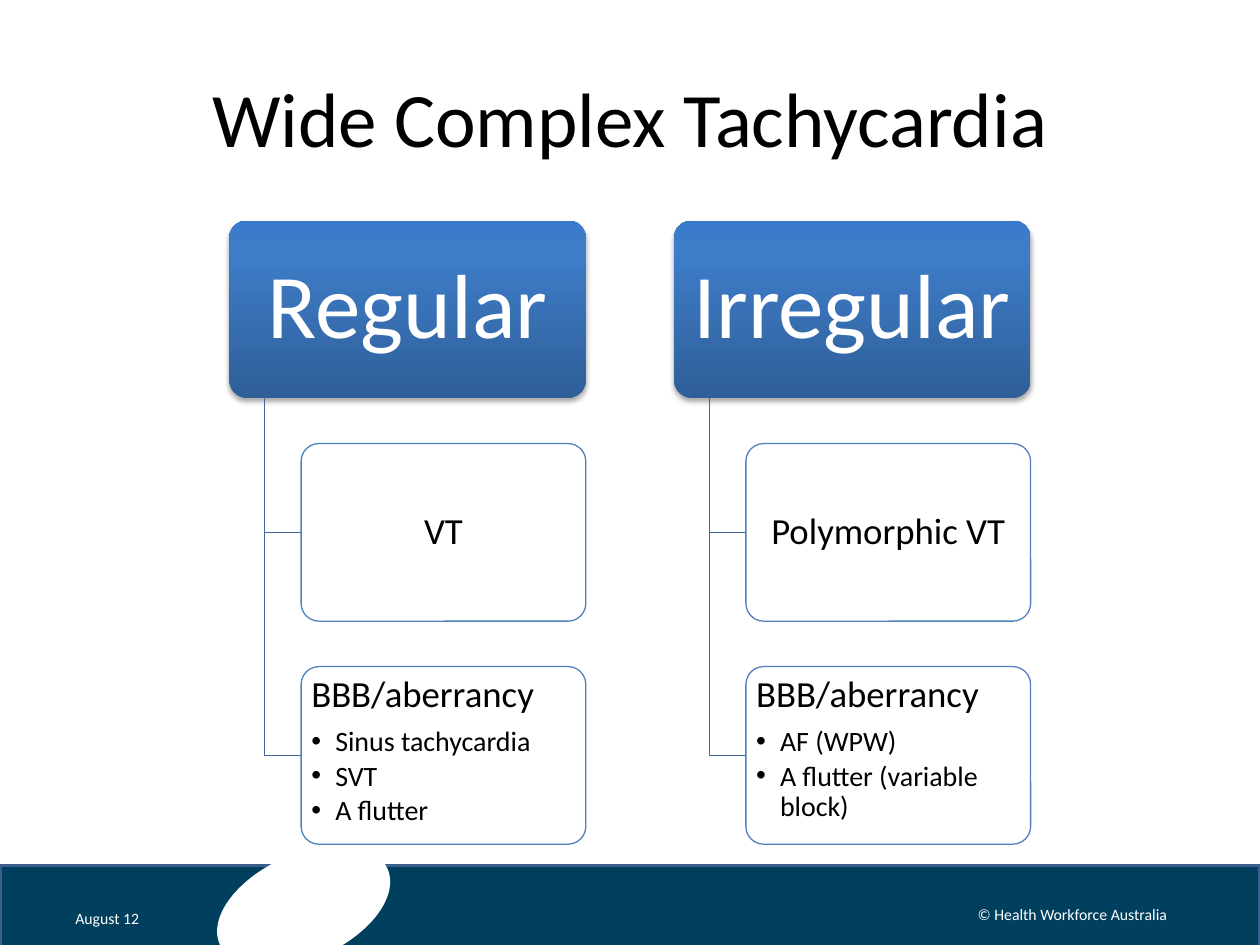
from copy import deepcopy

from lxml import etree
from pptx import Presentation
from pptx.dml.color import RGBColor
from pptx.enum.shapes import MSO_SHAPE
from pptx.enum.text import MSO_ANCHOR, PP_ALIGN
from pptx.oxml.ns import qn
from pptx.util import Inches, Pt

RECTANGLE, OVAL, ROUNDED = MSO_SHAPE.RECTANGLE, MSO_SHAPE.OVAL, MSO_SHAPE.ROUNDED_RECTANGLE
TOP, MIDDLE = MSO_ANCHOR.TOP, MSO_ANCHOR.MIDDLE
LEFT, CENTER = PP_ALIGN.LEFT, PP_ALIGN.CENTER

FONT = "Calibri"
COLORS = {
    "white": "FFFFFF", "black": "000000", "band": "003F5E", "band_edge": "3A5F8C",
    "branch": "3F6797", "box_edge": "4F81BD",
}
GRADIENT = [(0, "2F5F99"), (0.8, "3D7CC7"), (1, "3A7CCB")]

TITLE = "Wide Complex Tachycardia"
GROUPS = [
    ("Regular", [("VT", []),
                 ("BBB/aberrancy", ["Sinus tachycardia", "SVT", "A flutter"])]),
    ("Irregular", [("Polymorphic VT", []),
                   ("BBB/aberrancy", ["AF (WPW)", "A flutter (variable block)"])]),
]
FOOTERS = [
    ("August 12", 0.5, 7.14, 0.8, 0.29, LEFT),
    ("© Health Workforce Australia", 7.44, 7.06, 2.14, 0.4, CENTER),
]

GROUP_LEFT, GROUP_TOP, GROUP_STEP = 1.82, 1.75, 3.53
HEAD_WIDTH, BOX_HEIGHT, ROW_STEP = 2.83, 1.41, 1.77
BRANCH_INSET, CHILD_INSET = 0.28, 0.57


def rgb(name):
    return RGBColor.from_string(COLORS[name])


def add_box(slide, kind, left, top, width, height, fill=None, edge=None, weight=0.75):
    box = slide.shapes.add_shape(kind, Inches(left), Inches(top), Inches(width), Inches(height))
    box.shadow.inherit = False
    if fill:
        box.fill.solid()
        box.fill.fore_color.rgb = rgb(fill)
    if edge:
        box.line.color.rgb = rgb(edge)
        box.line.width = Pt(weight)
    else:
        box.line.fill.background()
    if kind == ROUNDED:
        box.adjustments[0] = 0.1
    return box


def set_frame(box, anchor, side, edge):
    frame = box.text_frame
    frame.word_wrap = True
    frame.vertical_anchor = anchor
    frame.margin_left = frame.margin_right = Inches(side)
    frame.margin_top = frame.margin_bottom = Inches(edge)
    return frame


def add_text(para, text, size, color, align):
    para.alignment = align
    span = para.add_run()
    span.text = text
    span.font.name = FONT
    span.font.size = Pt(size)
    span.font.color.rgb = rgb(color)


def add_bullet(para):
    properties = para._p.get_or_add_pPr()
    properties.set("marL", str(Inches(0.19)))
    properties.set("indent", str(-Inches(0.19)))
    etree.SubElement(properties, qn("a:buFont")).set("typeface", "Arial")
    etree.SubElement(properties, qn("a:buChar")).set("char", "•")


def add_alpha(color, percent):
    etree.SubElement(color, qn("a:alpha")).set("val", str(percent * 1000))


def add_shadow(box):
    effects = box._element.spPr.find(qn("a:effectLst"))
    shadow = etree.SubElement(effects, qn("a:outerShdw"), blurRad=str(Pt(3.1)),
                              dist=str(Pt(1.8)), dir="5400000", rotWithShape="0")
    color = etree.SubElement(shadow, qn("a:srgbClr"), val=COLORS["black"])
    add_alpha(color, 35)


def add_head(slide, text, left):
    head = add_box(slide, ROUNDED, left, GROUP_TOP, HEAD_WIDTH, BOX_HEIGHT)
    head.fill.gradient()
    head.fill.gradient_angle = 90
    stop_list = head._element.spPr.find(".//" + qn("a:gsLst"))
    stop_list.append(deepcopy(stop_list[-1]))
    for stop, (position, color) in zip(head.fill.gradient_stops, GRADIENT):
        stop.position = position
        stop.color.rgb = RGBColor.from_string(color)
    add_shadow(head)
    para = set_frame(head, MIDDLE, 0.05, 0.07).paragraphs[0]
    para.line_spacing = 0.9
    add_text(para, text, 52, "white", CENTER)


def add_branch(slide, left, top, right, bottom):
    start, corner, end = [(Inches(x), Inches(y))
                          for x, y in [(left, top), (left, bottom), (right, bottom)]]
    builder = slide.shapes.build_freeform(*start)
    builder.add_line_segments([corner, end], close=False)
    branch = builder.convert_to_shape()
    branch.shadow.inherit = False
    branch.fill.background()
    branch.line.color.rgb = rgb("branch")
    branch.line.width = Pt(0.75)


def add_child(slide, heading, bullets, left, top):
    child = add_box(slide, ROUNDED, left, top, HEAD_WIDTH - CHILD_INSET, BOX_HEIGHT,
                    "white", "box_edge")
    add_alpha(child._element.spPr.find(qn("a:solidFill"))[0], 90)
    frame = set_frame(child, TOP if bullets else MIDDLE, 0.04, 0.03)
    para = frame.paragraphs[0]
    para.line_spacing = 0.9
    if bullets:
        para.space_after = Pt(7)
    add_text(para, heading, 21, "black", LEFT if bullets else CENTER)
    for bullet in bullets:
        para = frame.add_paragraph()
        add_bullet(para)
        para.level = 1
        para.line_spacing = 0.9
        para.space_after = Pt(2.4)
        add_text(para, bullet, 16, "black", LEFT)


def main():
    deck = Presentation()
    deck.slide_width, deck.slide_height = Inches(10), Inches(7.5)
    slide = deck.slides.add_slide(deck.slide_layouts[5])

    add_box(slide, RECTANGLE, 0, 6.87, 10, 0.65, "band", "band_edge", 2)
    add_box(slide, OVAL, 1.68, 6.78, 1.46, 0.83, "white").rotation = 335.7

    title = slide.shapes.title
    title.left, title.top, title.width, title.height = map(Inches, (0.5, 0.3, 9, 1.25))
    title.text_frame.vertical_anchor = MIDDLE
    add_text(title.text_frame.paragraphs[0], TITLE, 44, "black", CENTER)

    for column, (name, children) in enumerate(GROUPS):
        left = GROUP_LEFT + column * GROUP_STEP
        add_head(slide, name, left)
        for row, (heading, bullets) in enumerate(children, start=1):
            top = GROUP_TOP + row * ROW_STEP
            add_branch(slide, left + BRANCH_INSET, GROUP_TOP + BOX_HEIGHT,
                       left + CHILD_INSET, top + BOX_HEIGHT / 2)
            add_child(slide, heading, bullets, left + CHILD_INSET, top)

    for text, left, top, width, height, align in FOOTERS:
        box = slide.shapes.add_textbox(Inches(left), Inches(top), Inches(width), Inches(height))
        frame = set_frame(box, MIDDLE, 0.1, 0.05)
        add_text(frame.paragraphs[0], text, 9, "white", align)

    deck.save("out.pptx")


if __name__ == "__main__":
    main()
